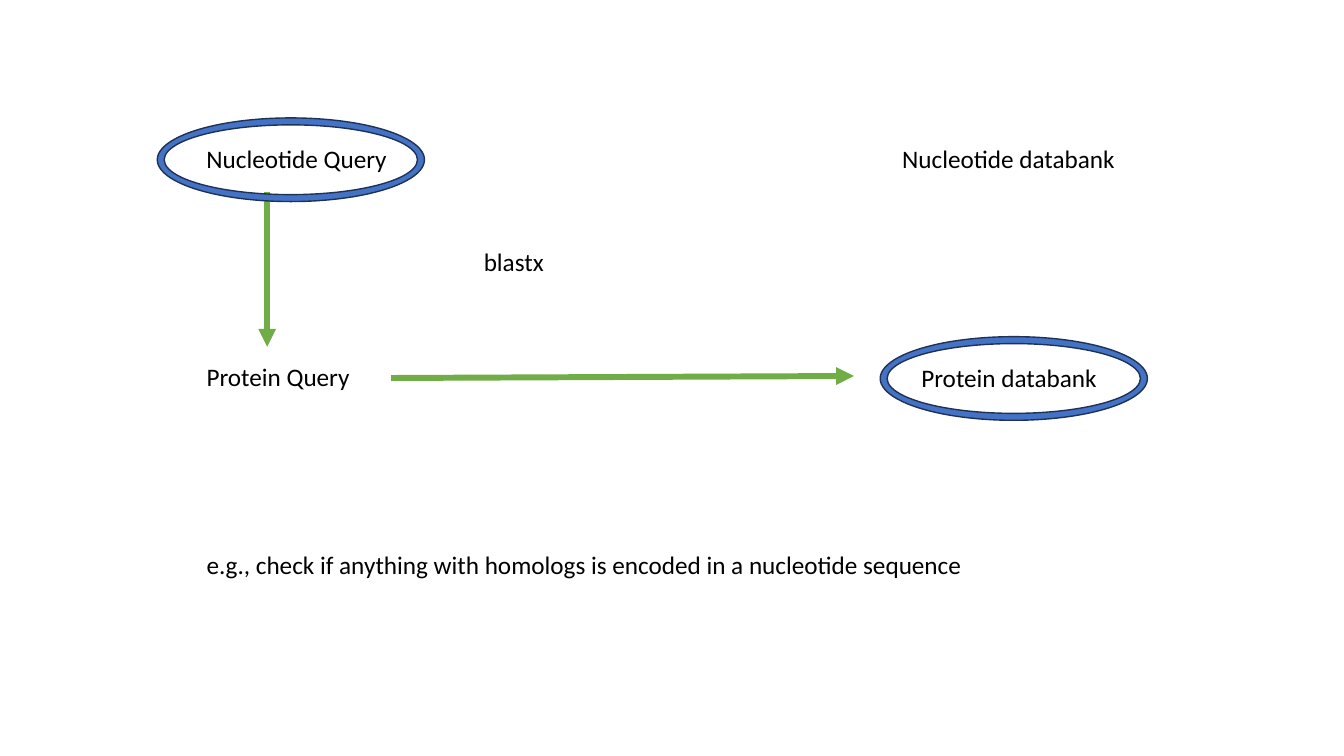
from lxml import etree
from pptx import Presentation
from pptx import util as u
from pptx.dml.color import RGBColor
from pptx.enum import shapes as sh
from pptx.oxml.ns import qn


def color(code):
    return RGBColor.from_string(code)


def label(slide, words, left, top, width, height=0.4):
    box = slide.shapes.add_textbox(*map(u.Inches, (left, top, width, height)))
    frame = box.text_frame
    frame.word_wrap = False
    para = frame.paragraphs[0]
    para.text = words
    para.font.name = "Calibri"
    para.font.size = u.Pt(18)
    para.font.color.rgb = color("000000")


def arrow(slide, *ends):
    """Draw a green arrow; ends are x1, y1, x2, y2 in inches."""
    line = slide.shapes.add_connector(
        sh.MSO_CONNECTOR.STRAIGHT, *map(u.Inches, ends))
    line.line.color.rgb = color("70AD47")
    line.line.width = u.Pt(4.25)
    props = line.line._get_or_add_ln()
    etree.SubElement(props, qn("a:tailEnd"), type="triangle")
    etree.SubElement(line._element.spPr, qn("a:effectLst"))


def ring(slide, left, top):
    oval = slide.shapes.add_shape(
        sh.MSO_SHAPE.DONUT, *map(u.Inches, (left, top, 2.65, 0.83)))
    oval.adjustments[0] = 0.083
    oval.shadow.inherit = False
    oval.fill.solid()
    oval.fill.fore_color.rgb = color("4472C4")
    oval.line.color.rgb = color("1E3256")
    oval.line.width = u.Pt(1)


def scheme(slide, left, top):
    """Place queries on the left, databanks on the right, and the blastx route."""
    low = top + 2.17
    label(slide, "Nucleotide databank", left + 6.9, top, 2.34)
    label(slide, "Protein databank", left + 7.09, low, 1.96, 0.71)
    label(slide, "Nucleotide Query", left, top, 2.07)
    label(slide, "Protein Query", left, low, 1.72)
    label(slide, "blastx", left + 2.75, top + 1.02, 0.86)
    arrow(slide, left + 1.93, low + 0.21, left + 6.52, low + 0.19)
    arrow(slide, left + 0.7, top + 0.53, left + 0.7, low - 0.1)
    ring(slide, left - 0.39, top - 0.2)
    ring(slide, left + 6.78, low - 0.2)


def main():
    deck = Presentation()
    deck.slide_width = u.Inches(13.33)
    deck.slide_height = u.Inches(7.5)
    slide = deck.slides.add_slide(deck.slide_layouts[6])
    scheme(slide, 1.95, 1.37)
    label(slide, "e.g., check if anything with homologs is encoded "
          "in a nucleotide sequence", 1.95, 5.4, 7.79)
    deck.save("out.pptx")


if __name__ == "__main__":
    main()
